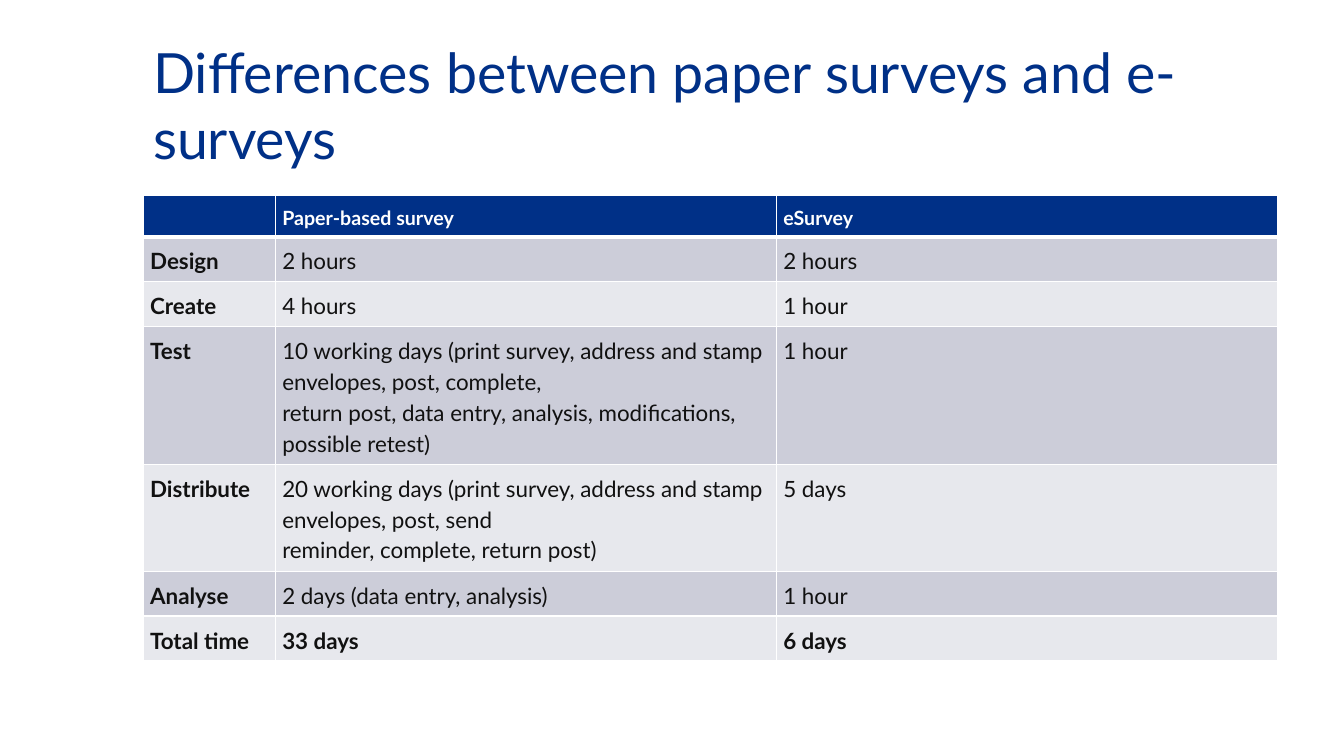
"""Build a slide with a table comparing paper surveys and e-surveys."""
from lxml import etree
from pptx import Presentation
from pptx import util as u
from pptx.dml.color import RGBColor
from pptx.enum import text
from pptx.oxml import ns

COLORS = {"navy": "003087", "white": "FFFFFF", "ink": "111111",
          "dark_band": "CCCDD9", "light_band": "E7E8ED"}
FONT = "Lato"
ROWS = [
    ("", "Paper-based survey", "eSurvey"),
    ("Design", "2 hours", "2 hours"),
    ("Create", "4 hours", "1 hour"),
    ("Test",
     "10 working days (print survey, address and stamp envelopes, post, complete,\n"
     "return post, data entry, analysis, modifications, possible retest)",
     "1 hour"),
    ("Distribute",
     "20 working days (print survey, address and stamp envelopes, post, send\n"
     "reminder, complete, return post)",
     "5 days"),
    ("Analyse", "2 days (data entry, analysis)", "1 hour"),
    ("Total time", "33 days", "6 days"),
]


def set_font(p, size, color, bold=False):
    p.font.name = FONT
    p.font.size = u.Pt(size)
    p.font.bold = bold
    p.font.color.rgb = RGBColor.from_string(COLORS[color])


def add_border(cell, side, width):
    ln = etree.SubElement(cell._tc.get_or_add_tcPr(), ns.qn(f"a:ln{side}"), w=str(u.Pt(width)))
    fill = etree.SubElement(ln, ns.qn("a:solidFill"))
    etree.SubElement(fill, ns.qn("a:srgbClr"), val=COLORS["white"])


prs = Presentation()
prs.slide_width, prs.slide_height = u.Inches(13.33), u.Inches(7.5)
s = prs.slides.add_slide(prs.slide_layouts[6])

title = s.shapes.add_textbox(u.Inches(1.42), u.Inches(0.52), u.Inches(11.25), u.Inches(1.03))
tf = title.text_frame
tf.word_wrap = True
tf.vertical_anchor = text.MSO_ANCHOR.MIDDLE
tf.text = "Differences between paper surveys and e-surveys"
set_font(tf.paragraphs[0], 39.6, "navy")

row_height = 0.41
table = s.shapes.add_table(len(ROWS), 3, u.Inches(1.42), u.Inches(1.94),
                           u.Inches(11.25), u.Inches(row_height * len(ROWS))).table
for column, width in zip(table.columns, (1.31, 4.97, 4.97)):
    column.width = u.Inches(width)

for i, labels in enumerate(ROWS):
    table.rows[i].height = u.Inches(row_height)
    header, total = i == 0, i == len(ROWS) - 1
    band = "navy" if header else "dark_band" if i % 2 else "light_band"
    for j, label in enumerate(labels):
        cell = table.cell(i, j)
        for side in "LRTB":
            under_header = (i, side) in ((0, "B"), (1, "T"))
            add_border(cell, side, 3 if under_header else 1)
        cell.fill.solid()
        cell.fill.fore_color.rgb = RGBColor.from_string(COLORS[band])
        if not label:
            continue
        cell.margin_left = cell.margin_right = u.Inches(0.07)
        cell.margin_top = cell.margin_bottom = u.Inches(0.07)
        cell.text = label
        for p in cell.text_frame.paragraphs:
            p.line_spacing = 1.15
            set_font(p, 14 if header else 16, "white" if header else "ink",
                     header or total or j == 0)

prs.save("out.pptx")
